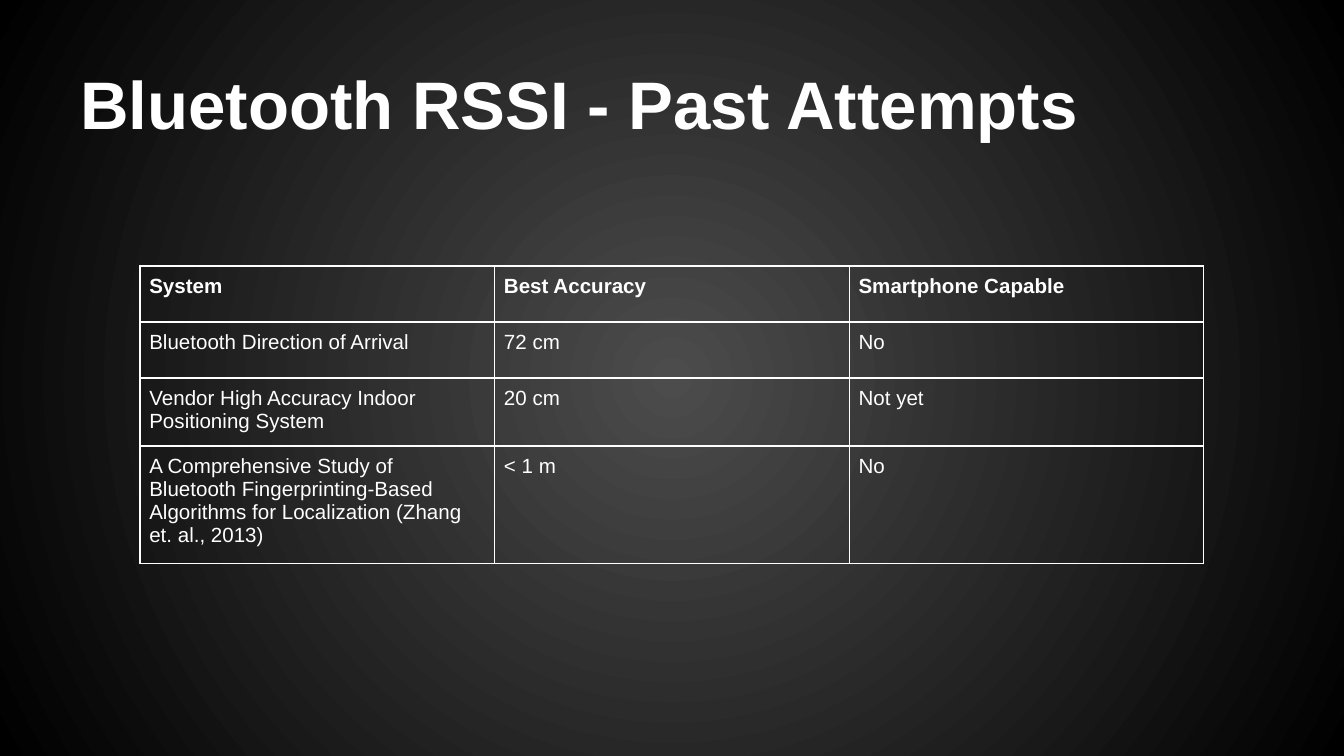
from lxml import etree
from pptx import Presentation
from pptx import util as u
from pptx.dml import color
from pptx.enum import text
from pptx.oxml import ns

WHITE = "FFFFFF"
ROWS = [
    ("System", "Best Accuracy", "Smartphone Capable"),
    ("Bluetooth Direction of Arrival", "72 cm", "No"),
    ("Vendor High Accuracy Indoor Positioning System", "20 cm", "Not yet"),
    ("A Comprehensive Study of Bluetooth Fingerprinting-Based Algorithms "
     "for Localization (Zhang et. al., 2013)", "< 1 m", "No"),
]


def rgb(code):
    """Turn a hex string into a colour."""
    return color.RGBColor.from_string(code)


def node(parent, tag, **attrs):
    """Add a drawing element under a parent."""
    return etree.SubElement(parent, ns.qn(tag), **attrs)


def add_run(para, words, size, bold=False):
    """Add one white run to a paragraph."""
    run = para.add_run()
    run.text = words
    run.font.name = "Arial"
    run.font.size = u.Pt(size)
    run.font.bold = bold
    run.font.color.rgb = rgb(WHITE)


def set_inset(item, inset):
    """Give a cell or text frame equal margins."""
    for side in ("left", "top", "right", "bottom"):
        setattr(item, f"margin_{side}", u.Pt(inset))


def paint_back(slide, inner, outer):
    """Fill the background with a circular gradient."""
    fill = slide.background.fill
    fill.gradient()
    for stop, code, place in zip(fill.gradient_stops, (inner, outer), (0, 1)):
        stop.color.rgb = rgb(code)
        stop.position = place
    grad = slide.element.find(".//" + ns.qn("a:gradFill"))
    grad.remove(grad.find(ns.qn("a:lin")))
    ring = etree.Element(ns.qn("a:path"), path="circle")
    grad.find(ns.qn("a:gsLst")).addnext(ring)
    node(ring, "a:fillToRect", l="50000", t="50000", r="50000", b="50000")


def add_title(slide, words):
    """Add the title, set on the bottom of its box."""
    box = slide.shapes.add_textbox(u.Pt(36), u.Pt(16.2), u.Pt(648), u.Pt(67.5))
    frame = box.text_frame
    frame.word_wrap = True
    frame.vertical_anchor = text.MSO_ANCHOR.BOTTOM
    set_inset(frame, 7.2)
    add_run(frame.paragraphs[0], words, 36, True)


def add_edges(cell, code, width):
    """Draw a line on each side of a cell."""
    props = cell._tc.get_or_add_tcPr()
    for side in "LRTB":
        line = node(props, f"a:ln{side}", w=str(u.Pt(width)))
        node(node(line, "a:solidFill"), "a:srgbClr", val=code)


def add_grid(slide, rows):
    """Add the table of systems with a bold head row."""
    wide, high = 190, 30
    count = len(rows[0])
    table = slide.shapes.add_table(
        len(rows), count, u.Pt(75), u.Pt(142.5),
        u.Pt(wide * count), u.Pt(high * len(rows))).table
    table.horz_banding = False
    for i, row in enumerate(rows):
        for j, words in enumerate(row):
            cell = table.cell(i, j)
            set_inset(cell, 5)
            add_edges(cell, WHITE, 0.75)
            cell.fill.background()
            add_run(cell.text_frame.paragraphs[0], words, 11, i == 0)


def main():
    """Build and save the slide."""
    deck = Presentation()
    deck.slide_width, deck.slide_height = u.Pt(720), u.Pt(405)
    slide = deck.slides.add_slide(deck.slide_layouts[6])
    paint_back(slide, "4C4C4C", "000000")
    add_title(slide, "Bluetooth RSSI - Past Attempts")
    add_grid(slide, ROWS)
    deck.save("out.pptx")


if __name__ == "__main__":
    main()
